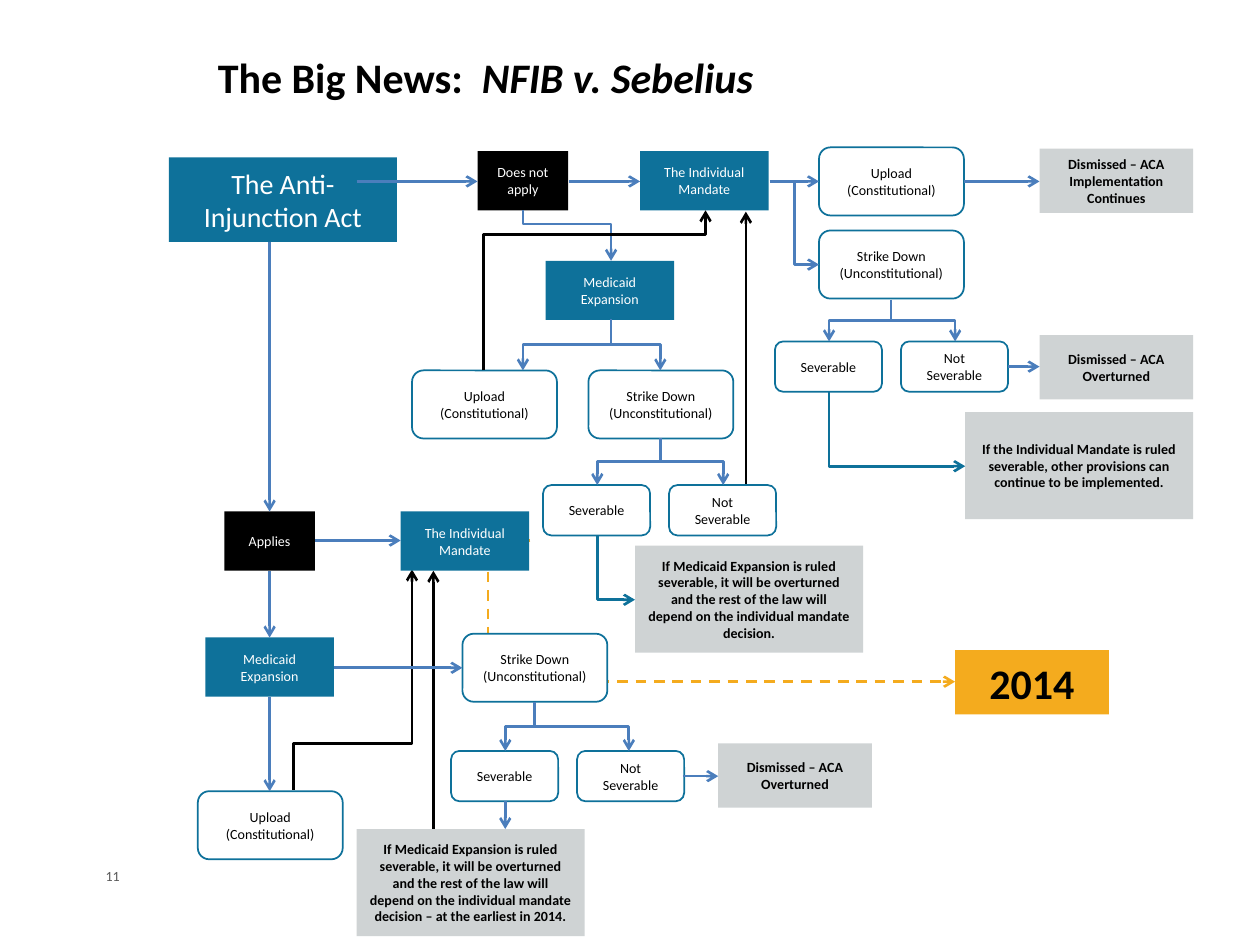
from dataclasses import dataclass
from typing import NamedTuple, Optional

from lxml import etree
from pptx import Presentation
from pptx.dml.color import RGBColor
from pptx.enum import dml, shapes, text
from pptx.oxml.ns import qn
from pptx.util import Inches, Pt


@dataclass(frozen=True)
class Theme:
    font: str = "Calibri"
    teal: str = "0E719A"
    blue: str = "4B7EBC"
    amber: str = "F4AB1E"
    grey: str = "CFD3D4"
    black: str = "000000"
    white: str = "FFFFFF"
    number: str = "595959"
    small: float = 8
    heading: float = 16
    title: float = 24
    outline: float = 1
    arrow: float = 1.5


THEME = Theme()


class Style(NamedTuple):
    width: float
    height: float
    fill: str
    ink: str
    size: float = THEME.small
    bold: bool = False
    rounded: bool = False


class Node(NamedTuple):
    style: Style
    left: float
    top: float
    words: str


class Arrow(NamedTuple):
    start: tuple[float, float]
    end: tuple[float, float]
    color: str = THEME.blue
    bend: Optional[float] = None  # share of the way before the turn; 1 is a single corner
    vertical: bool = True  # an elbow leaves its start vertically
    dashed: bool = False


# Box styles
ROOT = Style(1.81, 0.67, THEME.teal, THEME.white, THEME.heading)
ISSUE = Style(1.02, 0.47, THEME.teal, THEME.white)
ANSWER = Style(0.72, 0.47, THEME.black, THEME.white)
RULING = Style(1.15, 0.54, THEME.white, THEME.black, rounded=True)
SEVERED = Style(0.85, 0.4, THEME.white, THEME.black, rounded=True)
RESULT = Style(1.22, 0.51, THEME.grey, THEME.black, bold=True)
NOTE = Style(1.81, 0.85, THEME.grey, THEME.black, bold=True)
YEAR = Style(1.22, 0.51, THEME.amber, THEME.black, THEME.title, True)

# Wording used more than once
MANDATE = "The Individual Mandate"
MEDICAID = "Medicaid Expansion"
UPHOLD = "Upload (Constitutional)"
STRIKE = "Strike Down\n(Unconstitutional)"
OVERTURNED = "Dismissed – ACA Overturned"
MEDICAID_NOTE = ("If Medicaid Expansion is ruled severable, it will be overturned and "
                 "the rest of the law will depend on the individual mandate decision")

NODES = [
    Node(ROOT, 1.34, 1.25, "The Anti-Injunction Act"),
    # Act does not apply
    Node(ANSWER, 3.79, 1.2, "Does not apply"),
    Node(ISSUE, 5.08, 1.2, MANDATE),
    Node(RULING, 6.5, 1.17, UPHOLD),
    Node(RULING, 6.5, 1.83, STRIKE),
    Node(RESULT, 8.25, 1.18, "Dismissed – ACA Implementation Continues"),
    Node(RESULT, 8.25, 2.66, OVERTURNED),
    Node(NOTE, 7.66, 3.27, "If the Individual Mandate is ruled severable, "
                           "other provisions can continue to be implemented."),
    Node(ISSUE, 4.33, 2.07, MEDICAID),
    Node(RULING, 3.27, 2.94, UPHOLD),
    Node(RULING, 4.67, 2.94, STRIKE),
    Node(NOTE, 5.04, 4.33, MEDICAID_NOTE + "."),
    # Act applies
    Node(ANSWER, 1.78, 4.06, "Applies"),
    Node(ISSUE, 3.18, 4.06, MANDATE),
    Node(ISSUE, 1.63, 5.06, MEDICAID),
    Node(RULING, 1.57, 6.28, UPHOLD),
    Node(RULING, 3.67, 5.03, STRIKE),
    Node(RESULT, 5.7, 5.9, OVERTURNED),
    Node(NOTE, 2.83, 6.58, MEDICAID_NOTE + " – at the earliest in 2014."),
    Node(YEAR, 7.58, 5.16, "2014"),
]
# Each struck-down provision is severable or not
for left, top in [(6.15, 2.71), (4.31, 3.85), (3.58, 5.96)]:
    NODES += [Node(SEVERED, left, top, "Severable"),
              Node(SEVERED, left + 1, top, "Not Severable")]

# Arrows that run behind the boxes
BACK_ARROWS = [
    Arrow((4.21, 4.29), (7.58, 5.41), THEME.amber, -0.1, vertical=False, dashed=True),
    Arrow((5.92, 3.88), (5.92, 1.68), THEME.black),
    Arrow((3.44, 6.58), (3.44, 4.53), THEME.black),
    Arrow((2.33, 6.27), (3.27, 4.52), THEME.black, 0.21),
]

FRONT_ARROWS = [
    # Down the left-hand column
    Arrow((2.14, 1.92), (2.14, 4.06)),
    Arrow((2.14, 4.53), (2.14, 5.06)),
    Arrow((2.14, 5.53), (2.14, 6.28)),
    # Along the top row
    Arrow((2.83, 1.44), (3.79, 1.44)),
    Arrow((4.52, 1.44), (5.08, 1.44)),
    Arrow((6.11, 1.44), (6.5, 1.44)),
    Arrow((7.65, 1.44), (8.25, 1.44)),
    Arrow((6.11, 1.44), (6.5, 2.1), bend=0.5, vertical=False),
    # Between neighbours
    Arrow((2.5, 4.29), (3.18, 4.29)),
    Arrow((2.65, 5.3), (3.67, 5.3)),
    Arrow((5.42, 6.16), (5.7, 6.16)),
    Arrow((8, 2.91), (8.25, 2.91)),
    Arrow((4.01, 6.36), (4.01, 6.58)),
    Arrow((4.15, 1.67), (4.85, 2.07), bend=0.27),
    # To the notes, and back to the mandate
    Arrow((4.74, 4.25), (5.04, 4.76), THEME.teal, 1),
    Arrow((6.58, 3.11), (7.66, 3.7), THEME.teal, 1),
    Arrow((3.84, 2.94), (5.6, 1.67), THEME.black, 0.85),
]
# Forks: one parent, two children on the same level
for parent, level, children in [((4.85, 2.53), 2.94, (4.15, 5.24)),
                                ((5.24, 3.48), 3.85, (4.74, 5.74)),
                                ((7.07, 2.38), 2.71, (6.58, 7.58)),
                                ((4.24, 5.57), 5.96, (4.01, 4.99))]:
    FRONT_ARROWS += [Arrow(parent, (child, level), bend=0.5) for child in children]


def add_span(para, words: str, size: float, color: str, bold=False, italic=False) -> None:
    span = para.add_run()
    span.text = words
    font = span.font
    font.name, font.size, font.bold, font.italic = THEME.font, Pt(size), bold, italic
    font.color.rgb = RGBColor.from_string(color)


def draw_node(page, node: Node) -> None:
    style = node.style
    preset = shapes.MSO_SHAPE.ROUNDED_RECTANGLE if style.rounded else shapes.MSO_SHAPE.RECTANGLE
    box = page.shapes.add_shape(preset, Inches(node.left), Inches(node.top),
                                Inches(style.width), Inches(style.height))
    box.shadow.inherit = False
    box.fill.solid()
    box.fill.fore_color.rgb = RGBColor.from_string(style.fill)
    if style.rounded:
        box.line.color.rgb = RGBColor.from_string(THEME.teal)
        box.line.width = Pt(THEME.outline)
    else:
        box.line.fill.background()
    frame = box.text_frame
    frame.word_wrap = True
    frame.vertical_anchor = text.MSO_ANCHOR.MIDDLE
    for index, words in enumerate(node.words.split("\n")):
        para = frame.add_paragraph() if index else frame.paragraphs[0]
        para.alignment = text.PP_ALIGN.CENTER
        add_span(para, words, style.size, style.ink, style.bold)


def draw_arrow(page, arrow: Arrow) -> None:
    (x1, y1), (x2, y2) = arrow.start, arrow.end
    bent = arrow.bend is not None
    turn = 0
    if bent and arrow.vertical:
        # A vertical start is a horizontal elbow turned about its centre
        right, down = x2 > x1, y2 > y1
        turn = 270 if right and down else 90
        mid_x, mid_y = (x1 + x2) / 2, (y1 + y2) / 2
        half_x = abs(y2 - y1) / 2 * (-1 if right else 1)
        half_y = abs(x2 - x1) / 2 * (-1 if right and not down else 1)
        x1, x2 = mid_x - half_x, mid_x + half_x
        y1, y2 = mid_y - half_y, mid_y + half_y
    kind = shapes.MSO_CONNECTOR.ELBOW if bent else shapes.MSO_CONNECTOR.STRAIGHT
    link = page.shapes.add_connector(kind, Inches(x1), Inches(y1), Inches(x2), Inches(y2))
    link.line.color.rgb = RGBColor.from_string(arrow.color)
    link.line.width = Pt(THEME.arrow)
    if arrow.dashed:
        link.line.dash_style = dml.MSO_LINE.DASH
    properties = link._element.spPr
    if turn:
        properties.find(qn("a:xfrm")).set("rot", str(turn * 60000))
    if bent:
        geometry = properties.find(qn("a:prstGeom"))
        if arrow.bend == 1:
            geometry.set("prst", "bentConnector2")
        else:
            guides = geometry.find(qn("a:avLst"))
            if guides is None:
                guides = etree.SubElement(geometry, qn("a:avLst"))
            etree.SubElement(guides, qn("a:gd"), name="adj1",
                             fmla=f"val {round(arrow.bend * 100000)}")
    etree.SubElement(properties.find(qn("a:ln")), qn("a:tailEnd"), type="arrow")
    etree.SubElement(properties, qn("a:effectLst"))


def add_label(page, left: float, top: float, width: float, height: float):
    box = page.shapes.add_textbox(Inches(left), Inches(top), Inches(width), Inches(height))
    box.text_frame.word_wrap = True
    return box.text_frame


def main() -> None:
    deck = Presentation()
    deck.slide_width, deck.slide_height = Inches(10), Inches(7.5)
    page = deck.slides.add_slide(deck.slide_layouts[6])

    # Flow chart, from back to front
    for arrow in BACK_ARROWS:
        draw_arrow(page, arrow)
    for node in NODES:
        draw_node(page, node)
    for arrow in FRONT_ARROWS:
        draw_arrow(page, arrow)

    # Title and page number
    title = add_label(page, 1.63, 0.36, 5.95, 0.5).paragraphs[0]
    add_span(title, "The Big News:  ", THEME.title, THEME.black, bold=True)
    add_span(title, "NFIB v. Sebelius", THEME.title, THEME.black, bold=True, italic=True)
    number = add_label(page, 0.7, 6.75, 0.39, 0.4)
    number.vertical_anchor = text.MSO_ANCHOR.MIDDLE
    number.paragraphs[0].alignment = text.PP_ALIGN.CENTER
    add_span(number.paragraphs[0], "11", THEME.small, THEME.number)

    deck.save("out.pptx")


if __name__ == "__main__":
    main()
